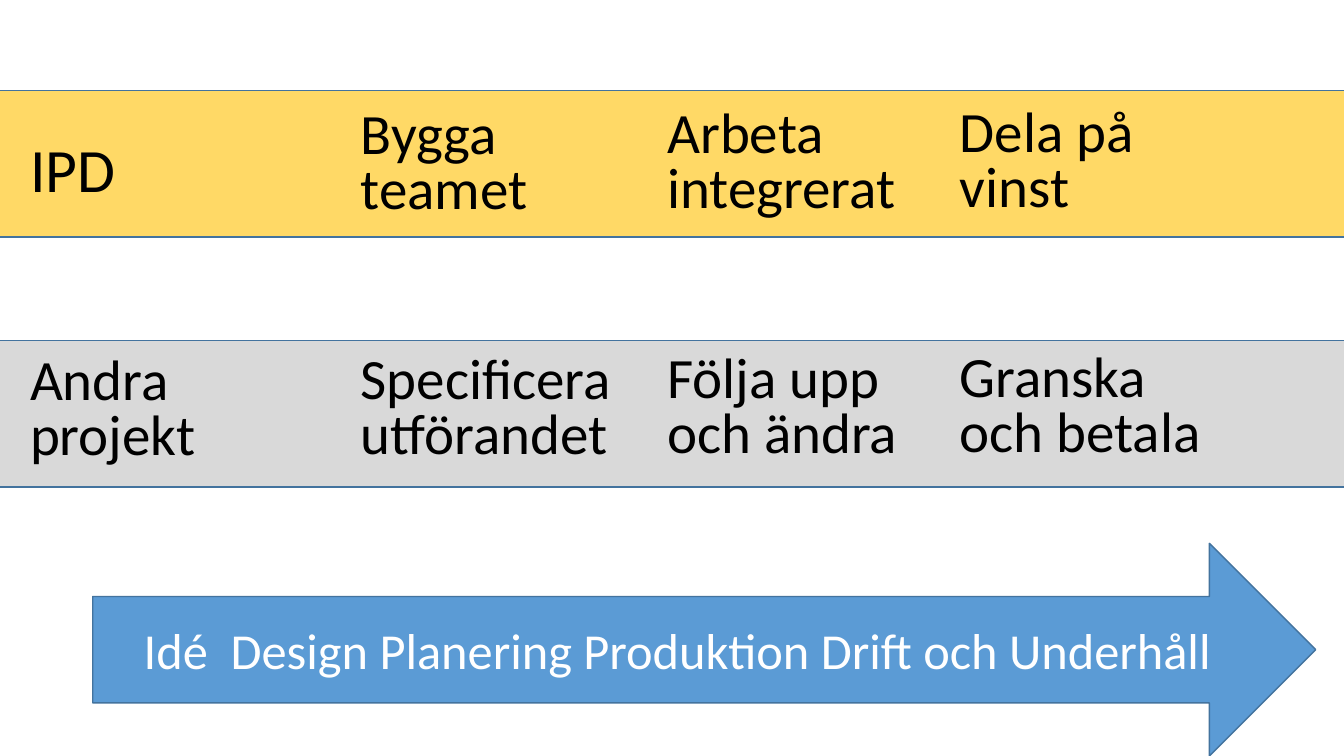
from pptx import Presentation
from pptx.dml.color import RGBColor
from pptx.enum.shapes import MSO_SHAPE as SHAPE
from pptx.enum.text import MSO_ANCHOR as ANCHOR, PP_ALIGN as ALIGN
from pptx.util import Inches, Pt

BLACK = RGBColor(0x00, 0x00, 0x00)
WHITE = RGBColor(0xFF, 0xFF, 0xFF)
YELLOW = RGBColor(0xFF, 0xD9, 0x66)
GREY = RGBColor(0xD9, 0xD9, 0xD9)
BLUE = RGBColor(0x5B, 0x9B, 0xD5)
OUTLINE = RGBColor(0x43, 0x73, 0x9E)

WIDTH, HEIGHT = 13.33, 7.5
COLUMNS = [0.2, 3.48, 6.52, 9.42]
COLUMN_RISE = 0.01
LABEL_WIDTH, LABEL_HEIGHT = 2.8, 1.27
BAND_LEFT, BAND_WIDTH, BAND_HEIGHT = -0.18, 14.48, 1.45
IPD_BAND, OTHER_BAND = 0.9, 3.38
IPD_ROW, OTHER_ROW = 1.02, 3.45

IPD_STEPS = ["Bygga teamet", "Arbeta integrerat", "Dela på vinst"]
OTHER_STEPS = ["Andra projekt", "Specificera\nutförandet",
               "Följa upp och ändra", "Granska och betala"]
PHASES = "Idé  Design Planering Produktion Drift och Underhåll"


def write(sp, text, size, color, spacing=1.0, align=ALIGN.LEFT):
    """Fill a shape with formatted, vertically centred text."""
    tf = sp.text_frame
    tf.word_wrap = True
    tf.vertical_anchor = ANCHOR.MIDDLE
    tf.text = text
    for p in tf.paragraphs:
        p.alignment = align
        p.line_spacing = spacing
        p.space_before = Pt(0)
        p.font.name = "Calibri"
        p.font.size = Pt(size)
        p.font.color.rgb = color


def add_outlined(s, kind, box, fill):
    """Add a filled preset shape with the shared outline."""
    sp = s.shapes.add_shape(kind, *map(Inches, box))
    sp.shadow.inherit = False
    sp.fill.solid()
    sp.fill.fore_color.rgb = fill
    sp.line.color.rgb = OUTLINE
    sp.line.width = Pt(1)
    return sp


def add_band(s, top, fill):
    """Add a full-width background band."""
    add_outlined(s, SHAPE.RECTANGLE,
                 (BAND_LEFT, top, BAND_WIDTH, BAND_HEIGHT), fill)


def add_labels(s, row, labels, first_column):
    """Add one row of labels, each column slightly above the previous."""
    for col, text in enumerate(labels, first_column):
        width = LABEL_WIDTH if col else 2.34
        box = (COLUMNS[col], row - COLUMN_RISE * col, width, LABEL_HEIGHT)
        write(s.shapes.add_textbox(*map(Inches, box)), text, 40.7, BLACK, 0.8)


def place_title(s, text):
    """Move the title placeholder in front of the bands and fill it."""
    sp = s.shapes.title
    sp.element.getparent().append(sp.element)
    sp.left, sp.top, sp.width, sp.height = map(
        Inches, (COLUMNS[0], 0.99, 2.12, BAND_HEIGHT))
    write(sp, text, 44, BLACK, 0.9)


def add_phase_arrow(s):
    """Add the arrow of project phases along the bottom edge."""
    box = (0.92, HEIGHT - 2.11, 12.13, 2.11)
    sp = add_outlined(s, SHAPE.RIGHT_ARROW, box, BLUE)
    write(sp, PHASES, 36, WHITE, align=ALIGN.CENTER)


def main():
    """Build and save the slide."""
    prs = Presentation()
    prs.slide_width, prs.slide_height = Inches(WIDTH), Inches(HEIGHT)
    s = prs.slides.add_slide(prs.slide_layouts[5])
    add_band(s, OTHER_BAND, GREY)
    add_band(s, IPD_BAND, YELLOW)
    place_title(s, "IPD")
    add_phase_arrow(s)
    add_labels(s, OTHER_ROW, OTHER_STEPS, 0)
    add_labels(s, IPD_ROW, IPD_STEPS, 1)
    prs.save("out.pptx")


if __name__ == "__main__":
    main()
